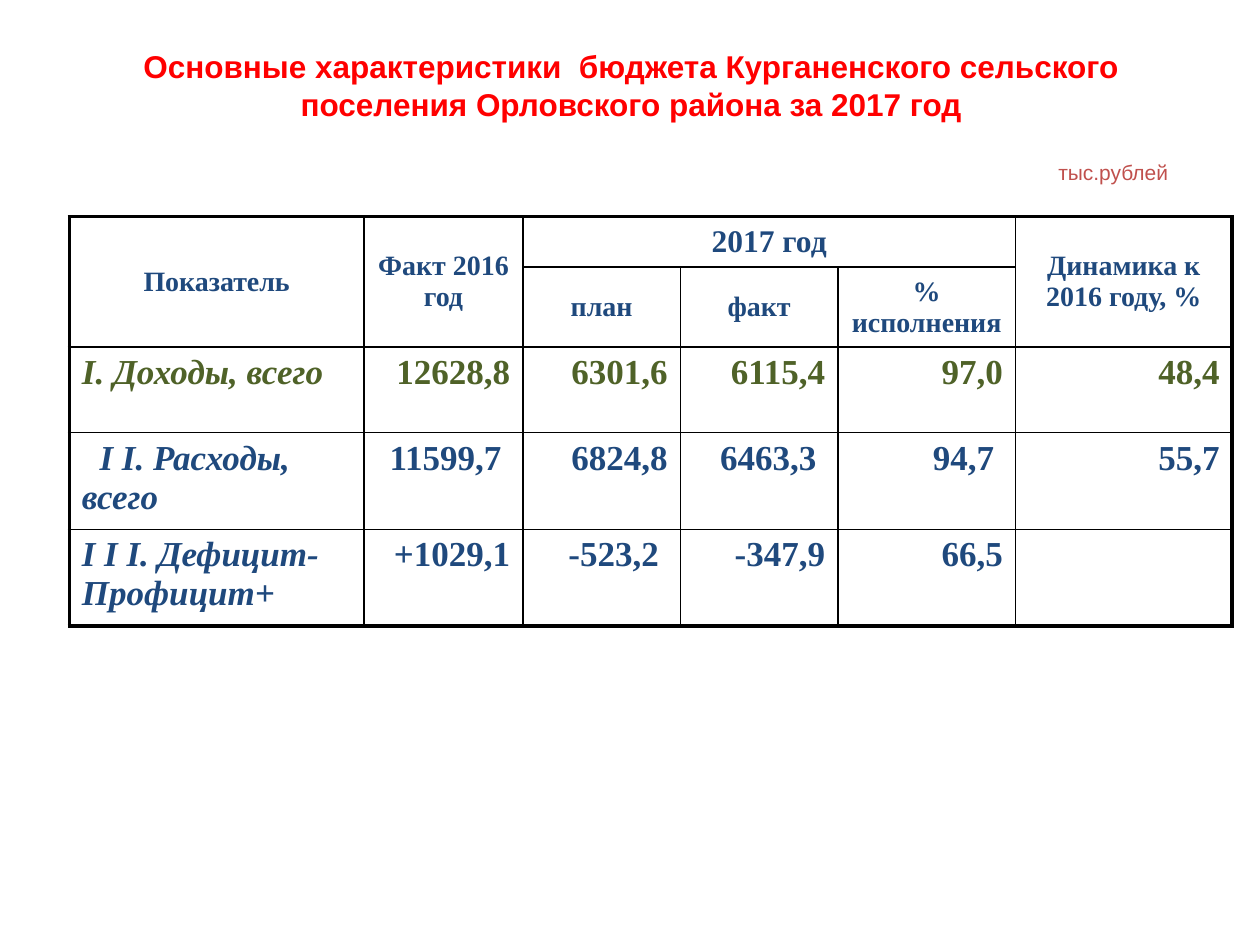
from dataclasses import dataclass

from lxml import etree
from pptx import Presentation
from pptx import util as u
from pptx.dml.color import RGBColor
from pptx.enum import text
from pptx.oxml.ns import qn

COLORS = {"title": "FF0000", "unit": "C0504D", "navy": "1F497D",
          "green": "4F6228", "border": "000000"}
SERIF = "Times New Roman"
LEFT, CENTER, RIGHT = text.PP_ALIGN.LEFT, text.PP_ALIGN.CENTER, text.PP_ALIGN.RIGHT
TOP, MIDDLE = text.MSO_ANCHOR.TOP, text.MSO_ANCHOR.MIDDLE
COLS = [2.34, 1.26, 1.25, 1.25, 1.41, 1.72]
ROWS = [0.34, 0.62, 0.68, 0.68, 0.68]


@dataclass
class Style:
    size: float
    color: str
    name: str = SERIF
    bold: bool = True
    italic: bool = False
    align: text.PP_ALIGN = CENTER
    anchor: text.MSO_ANCHOR = MIDDLE
    before: float = 0
    indent: float = 0


@dataclass
class Caption:
    words: str
    at: tuple
    style: Style


@dataclass
class Header:
    row: int
    col: int
    words: str
    rows: int = 1
    cols: int = 1
    size: float = 16


@dataclass
class Record:
    label: str
    values: list
    color: str = "navy"
    indent: float = 0


CAPTIONS = [
    Caption("Основные характеристики  бюджета Курганенского сельского "
            "поселения Орловского района за 2017 год",
            (0.51, 0.28, 9, 0.79), Style(18, "title", "Arial")),
    Caption("тыс.рублей", (8.17, 1.22, 1.2, 0.29),
            Style(12, "unit", "Arial", bold=False, align=RIGHT)),
]
HEADERS = [
    Header(0, 0, "Показатель", rows=2),
    Header(0, 1, "Факт 2016 год", rows=2),
    Header(0, 2, "2017 год", cols=3, size=18),
    Header(0, 5, "Динамика к 2016 году, %", rows=2),
    Header(1, 2, "план"),
    Header(1, 3, "факт"),
    Header(1, 4, "% исполнения"),
]
RECORDS = [
    Record("I. Доходы, всего",
           ["12628,8", "6301,6", "6115,4", "97,0", "48,4"], "green"),
    Record("I I. Расходы, всего",
           ["11599,7 ", "6824,8", "6463,3 ", "94,7 ", "55,7"], indent=0.14),
    Record("I I I. Дефицит-Профицит+",
           ["+1029,1", "-523,2 ", "-347,9", "66,5", ""]),
]


def write(tf, words: str, style: Style) -> None:
    """Put one styled paragraph into a text frame."""
    p = tf.paragraphs[0]
    for key, value in {"alignment": style.align,
                       "space_before": u.Pt(style.before)}.items():
        setattr(p, key, value)
    if style.indent:
        p._p.get_or_add_pPr().set("indent", str(u.Inches(style.indent)))
    r = p.add_run()
    r.text = words
    for key, value in {"name": style.name, "size": u.Pt(style.size),
                       "bold": style.bold, "italic": style.italic}.items():
        setattr(r.font, key, value)
    r.font.color.rgb = RGBColor.from_string(COLORS[style.color])


def add_caption(s, caption: Caption) -> None:
    """Add a wrapped text box."""
    sp = s.shapes.add_textbox(*map(u.Inches, caption.at))
    tf = sp.text_frame
    tf.word_wrap = True
    tf.vertical_anchor = caption.style.anchor
    write(tf, caption.words, caption.style)


def set_cell(cell, words: str, style: Style) -> None:
    """Write a table cell."""
    cell.vertical_anchor = style.anchor
    if words:
        write(cell.text_frame, words, style)


def set_borders(cell, row: int, col: int) -> None:
    """Draw thick borders on the table's outer edge and thin ones inside."""
    outer = {"L": col == 0, "R": col == len(COLS) - 1,
             "T": row == 0, "B": row == len(ROWS) - 1}
    tcPr = cell._tc.get_or_add_tcPr()
    for side, thick in outer.items():
        ln = etree.SubElement(tcPr, qn(f"a:ln{side}"),
                              w=str(u.Pt(2.25 if thick else 1)))
        fill = etree.SubElement(ln, qn("a:solidFill"))
        etree.SubElement(fill, qn("a:srgbClr"), val=COLORS["border"])
    cell.fill.background()


def add_budget_table(s) -> None:
    """Add the budget table with its headers and records."""
    box = map(u.Inches, (0.55, 1.72, sum(COLS), sum(ROWS)))
    table = s.shapes.add_table(len(ROWS), len(COLS), *box).table
    table.first_row = table.horz_banding = False
    for i, width in enumerate(COLS):
        table.columns[i].width = u.Inches(width)
    for i, height in enumerate(ROWS):
        table.rows[i].height = u.Inches(height)
        for j in range(len(COLS)):
            set_borders(table.cell(i, j), i, j)
    for h in HEADERS:
        cell = table.cell(h.row, h.col)
        if h.rows * h.cols > 1:
            cell.merge(table.cell(h.row + h.rows - 1, h.col + h.cols - 1))
        set_cell(cell, h.words, Style(h.size, "navy", before=4.3))
    for i, rec in enumerate(RECORDS, 2):
        set_cell(table.cell(i, 0), rec.label,
                 Style(20, rec.color, italic=True, align=LEFT, anchor=TOP,
                       before=4.8, indent=rec.indent))
        for j, value in enumerate(rec.values, 1):
            set_cell(table.cell(i, j), value,
                     Style(20, rec.color, align=RIGHT, anchor=TOP, before=4.8))


def main() -> None:
    """Build the slide and save it."""
    prs = Presentation()
    prs.slide_width, prs.slide_height = u.Inches(10), u.Inches(7.5)
    s = prs.slides.add_slide(prs.slide_layouts[6])
    for caption in CAPTIONS:
        add_caption(s, caption)
    add_budget_table(s)
    prs.save("out.pptx")


if __name__ == "__main__":
    main()
